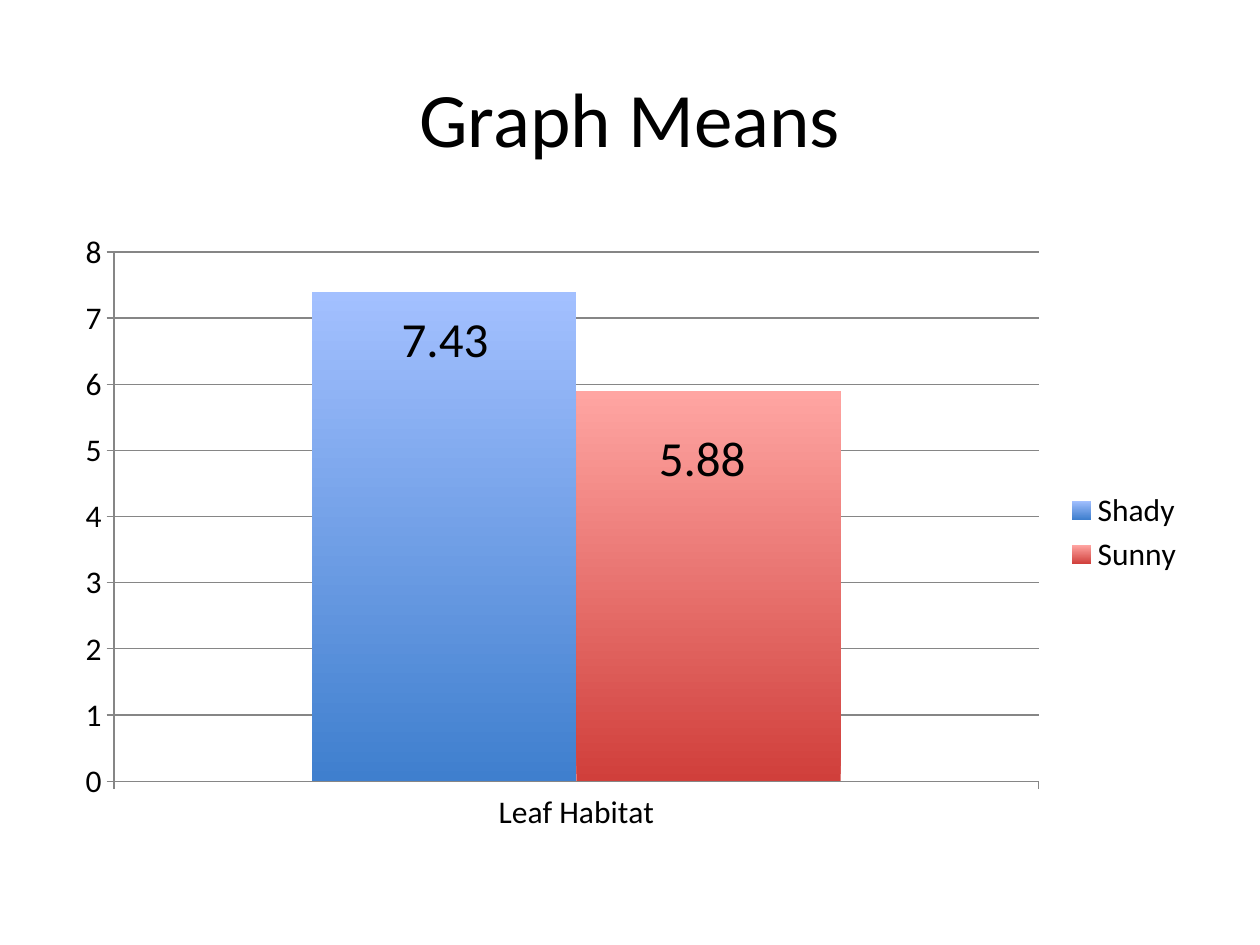
"""Build the Graph Means slide: a column chart of leaf means by habitat."""
from dataclasses import dataclass

from pptx import Presentation
from pptx import util as u
from pptx.chart import data
from pptx.dml import color
from pptx.enum import chart as charts, text

TITLE = "Graph Means"
CATEGORY = "Leaf Habitat"
SERIES = [
    {"name": "Shady", "mean": 7.4, "label": "7.43", "at": (222.5, 172.8)},
    {"name": "Sunny", "mean": 5.9, "label": "5.88", "at": (369.4, 240.5)},
]
TITLE_AREA = (36, 21.6, 648, 90)
CHART_AREA = (36, 126, 648, 356.4)
LABEL_SIZE = (64.8, 41)


@dataclass(frozen=True)
class Theme:
    """Colours, font and type sizes."""
    font: str = "Calibri"
    ink: str = "000000"
    rule: str = "868686"
    columns: tuple = (("3F7FCE", "A3C0FF"), ("D03F3B", "FFA5A2"))
    title: int = 44
    label: int = 28
    chart: int = 18


THEME = Theme()


def rgb(value):
    return color.RGBColor.from_string(value)


def points(values):
    return [u.Pt(value) for value in values]


def style_font(font, size):
    font.name, font.size = THEME.font, u.Pt(size)
    font.color.rgb = rgb(THEME.ink)


def add_text(page, area, words, size, align, anchor, wrap):
    frame = page.shapes.add_textbox(*points(area)).text_frame
    frame.word_wrap = wrap
    frame.vertical_anchor = anchor
    para = frame.paragraphs[0]
    para.alignment = align
    span = para.add_run()
    span.text = words
    style_font(span.font, size)


def style_line(line):
    line.color.rgb = rgb(THEME.rule)
    line.width = u.Pt(0.75)


def add_means_chart(page):
    means = data.CategoryChartData()
    means.categories = [CATEGORY]
    for item in SERIES:
        means.add_series(item["name"], [item["mean"]])
    graph = page.shapes.add_chart(
        charts.XL_CHART_TYPE.COLUMN_CLUSTERED, *points(CHART_AREA), means).chart
    style_font(graph.font, THEME.chart)
    graph.has_title = False
    graph.has_legend = True
    graph.legend.position = charts.XL_LEGEND_POSITION.RIGHT
    graph.legend.include_in_layout = False
    scale = graph.value_axis
    scale.minimum_scale, scale.maximum_scale, scale.major_unit = 0, 8, 1
    scale.has_major_gridlines = True
    style_line(scale.major_gridlines.format.line)
    for axis in (scale, graph.category_axis):
        axis.major_tick_mark = charts.XL_TICK_MARK.OUTSIDE
        style_line(axis.format.line)
    plot = graph.plots[0]
    plot.gap_width, plot.overlap, plot.vary_by_categories = 150, 0, False
    for column, shades in zip(plot.series, THEME.columns):
        fill = column.format.fill
        fill.gradient()
        fill.gradient_angle = 90
        for stop, shade in zip(fill.gradient_stops, shades):
            stop.color.rgb = rgb(shade)


def main():
    deck = Presentation()
    deck.slide_width, deck.slide_height = points((720, 540))
    page = deck.slides.add_slide(deck.slide_layouts[6])
    add_text(page, TITLE_AREA, TITLE, THEME.title,
             text.PP_ALIGN.CENTER, text.MSO_ANCHOR.MIDDLE, True)
    add_means_chart(page)
    for item in SERIES:
        add_text(page, item["at"] + LABEL_SIZE, item["label"], THEME.label,
                 text.PP_ALIGN.LEFT, text.MSO_ANCHOR.TOP, False)
    deck.save("out.pptx")


if __name__ == "__main__":
    main()
